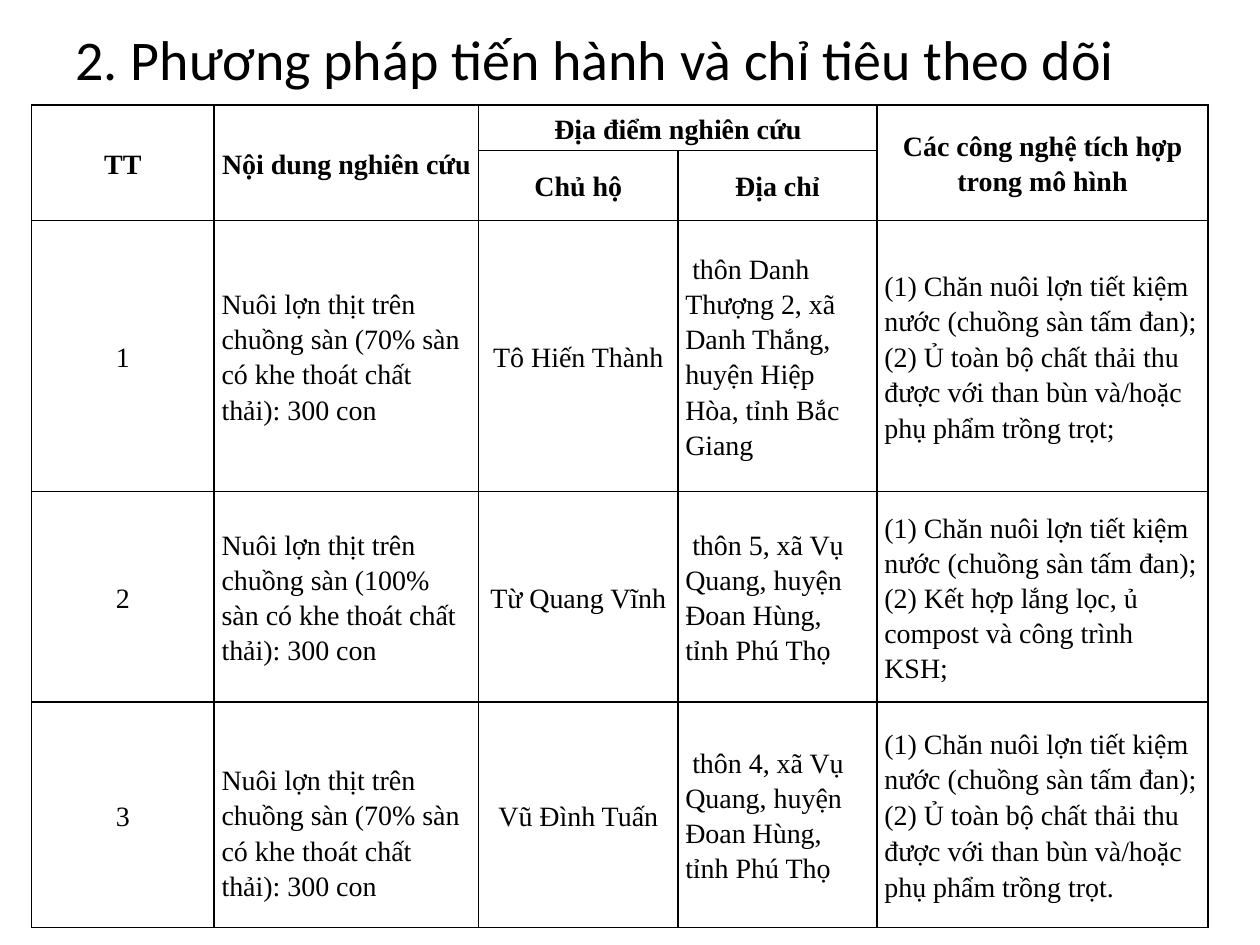
"""Build the slide with the table of pig farming models and integrated technologies."""
from lxml import etree
from pptx import Presentation
from pptx.dml.color import RGBColor
from pptx.enum import text
from pptx.oxml import ns
from pptx.util import Pt


def color(value):
    return RGBColor.from_string(value)


def add_borders(cell):
    properties = cell._tc.get_or_add_tcPr()
    for side in ("lnL", "lnR", "lnT", "lnB"):
        line = etree.SubElement(properties, ns.qn(f"a:{side}"), w=str(Pt(1)))
        fill = etree.SubElement(line, ns.qn("a:solidFill"))
        etree.SubElement(fill, ns.qn("a:srgbClr"), val="000000")


saving = "(1) Chăn nuôi lợn tiết kiệm nước (chuồng sàn tấm đan);"
compost = "(2) Ủ toàn bộ chất thải thu được với than bùn và/hoặc phụ phẩm trồng trọt"
pigs = "Nuôi lợn thịt trên chuồng sàn ({} sàn có khe thoát chất thải): 300 con"
rows = [
    ["TT", "Nội dung nghiên cứu", "Địa điểm nghiên cứu", "", "Các công nghệ tích hợp trong mô hình"],
    ["", "", "Chủ hộ", "Địa chỉ", ""],
    ["1", pigs.format("70%"), "Tô Hiến Thành",
     "thôn Danh Thượng 2, xã Danh Thắng, huyện Hiệp Hòa, tỉnh Bắc Giang",
     f"{saving}\n{compost};"],
    ["2", pigs.format("100%"), "Từ Quang Vĩnh",
     "thôn 5, xã Vụ Quang, huyện Đoan Hùng, tỉnh Phú Thọ",
     f"{saving}\n(2) Kết hợp lắng lọc, ủ compost và công trình KSH;"],
    ["3", pigs.format("70%"), "Vũ Đình Tuấn",
     "thôn 4, xã Vụ Quang, huyện Đoan Hùng, tỉnh Phú Thọ",
     f"{saving}\n{compost}."],
]
column_widths = [104.4, 151.2, 113.8, 113.8, 189.2]
row_heights = [26, 26, 154.8, 120.2, 128.9]

presentation = Presentation()
presentation.slide_width, presentation.slide_height = Pt(720), Pt(540)
slide = presentation.slides.add_slide(presentation.slide_layouts[5])

title = slide.shapes.title
title.left, title.top, title.width, title.height = Pt(36), Pt(0), Pt(648), Pt(66)
title.text_frame.text = "2. Phương pháp tiến hành và chỉ tiêu theo dõi"
title.text_frame.vertical_anchor = text.MSO_ANCHOR.MIDDLE
paragraph = title.text_frame.paragraphs[0]
paragraph.alignment = text.PP_ALIGN.LEFT
paragraph.font.name = "Calibri"
paragraph.font.size = Pt(32)
paragraph.font.color.rgb = color("000000")

table = slide.shapes.add_table(
    len(rows), len(column_widths), Pt(18), Pt(60),
    Pt(sum(column_widths)), Pt(sum(row_heights))).table
table.first_row = table.horz_banding = False
for column, width in zip(table.columns, column_widths):
    column.width = Pt(width)
for row, height in zip(table.rows, row_heights):
    row.height = Pt(height)
for column_index in (0, 1, 4):
    table.cell(0, column_index).merge(table.cell(1, column_index))
table.cell(0, 2).merge(table.cell(0, 3))

for row_index, row in enumerate(rows):
    for column_index, content in enumerate(row):
        cell = table.cell(row_index, column_index)
        header = row_index < 2
        cell.text = content
        cell.vertical_anchor = text.MSO_ANCHOR.MIDDLE
        cell.margin_left = cell.margin_right = Pt(4.25)
        cell.margin_top = cell.margin_bottom = Pt(0)
        add_borders(cell)
        cell.fill.background()
        for paragraph in cell.text_frame.paragraphs:
            centered = header or column_index in (0, 2)
            paragraph.alignment = text.PP_ALIGN.CENTER if centered else text.PP_ALIGN.LEFT
            paragraph.line_spacing = Pt(20)
            if paragraph.text.startswith(compost):
                paragraph.line_spacing = 1.15
                paragraph.space_after = Pt(10)
            if column_index == 3 and not header:
                paragraph._p.get_or_add_pPr().set("indent", str(Pt(4)))
            paragraph.font.name = "Times New Roman"
            paragraph.font.size = Pt(16)
            paragraph.font.bold = header
            paragraph.font.color.rgb = color("000000")
table.cell(4, 1).margin_top = Pt(20)

presentation.save("out.pptx")
